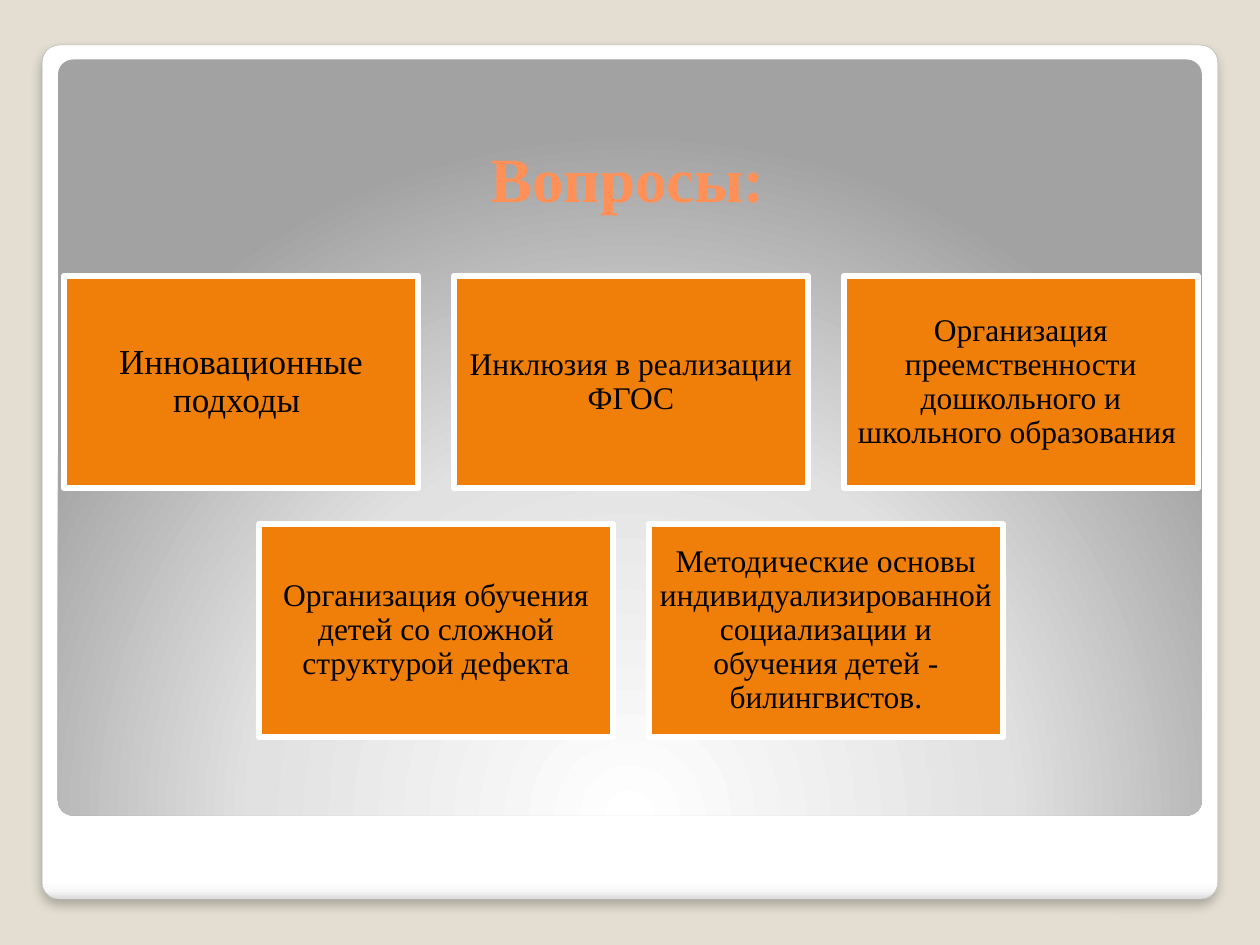
from dataclasses import dataclass

from lxml import etree
from pptx import Presentation
from pptx.dml.color import RGBColor
from pptx.enum.shapes import MSO_SHAPE
from pptx.enum.text import MSO_ANCHOR, PP_ALIGN
from pptx.oxml import parse_xml
from pptx.oxml.ns import nsdecls, qn
from pptx.util import Cm, Pt

RECT, ROUND_RECT = MSO_SHAPE.RECTANGLE, MSO_SHAPE.ROUNDED_RECTANGLE
CENTER, MIDDLE = PP_ALIGN.CENTER, MSO_ANCHOR.MIDDLE


@dataclass(frozen=True)
class Theme:
    font: str = "Times New Roman"
    background: str = "E3DED1"
    frame_line: str = "A4A4A4"
    card: str = "F07F09"
    card_line: str = "FFFFFF"
    text: str = "000000"
    title: str = "FF9158"
    title_size: int = 36
    lead_size: int = 20
    card_size: int = 18


THEME = Theme()
FRAME_STOPS = [(0, "FFFFFF"), (98, "FFFFFF"), (99, "F7F7F7"), (100, "DADADA")]
PANEL_STOPS = [(0, "FFFFFF"), (55, "E1E1E1"), (100, "A2A2A2")]
LINEAR = '<a:lin ang="5400000" scaled="0"/>'
RADIAL = ('<a:path path="circle"><a:fillToRect l="50000" t="175000" '
          'r="50000" b="-75000"/></a:path>')
SHADOW = ('<a:outerShdw {} blurRad="76200" dist="50800" dir="5400000" '
          'algn="tl" rotWithShape="0"><a:srgbClr val="000000">'
          '<a:alpha val="25000"/></a:srgbClr></a:outerShdw>')
CARD_ROWS = [
    [
        ("Инновационные подходы ", THEME.lead_size),
        ("Инклюзия в реализации ФГОС", THEME.card_size),
        ("Организация преемственности дошкольного и школьного образования ",
         THEME.card_size),
    ],
    [
        ("Организация обучения детей со сложной структурой дефекта",
         THEME.card_size),
        ("Методические основы индивидуализированной социализации "
         "и обучения детей - билингвистов.", THEME.card_size),
    ],
]


def rgb(value):
    return RGBColor.from_string(value)


def write(sp, text, size, color, bold=False, inset=0.18):
    tf = sp.text_frame
    tf.word_wrap = True
    tf.vertical_anchor = MIDDLE
    tf.margin_left = tf.margin_right = Cm(inset)
    tf.margin_top = tf.margin_bottom = Cm(inset)
    tf.text = text
    p = tf.paragraphs[0]
    p.alignment = CENTER
    p.line_spacing = 0.9
    r = p.runs[0]
    r.font.name = THEME.font
    r.font.size = Pt(size)
    r.font.bold = bold
    r.font.color.rgb = rgb(color)


def add_gradient_panel(s, left, top, width, height, stops, direction):
    sp = s.shapes.add_shape(ROUND_RECT, Cm(left), Cm(top), Cm(width), Cm(height))
    sp.adjustments[0] = 0.02
    sp.shadow.inherit = False
    sp.line.fill.background()
    marks = "".join(f'<a:gs pos="{pos * 1000}"><a:srgbClr val="{color}"/></a:gs>'
                    for pos, color in stops)
    gradient = parse_xml(f'<a:gradFill {nsdecls("a")} rotWithShape="1">'
                         f'<a:gsLst>{marks}</a:gsLst>{direction}</a:gradFill>')
    sp._element.spPr.find(qn("a:prstGeom")).addnext(gradient)
    return sp


def add_backdrop(s, left, top, width, height):
    s.background.fill.solid()
    s.background.fill.fore_color.rgb = rgb(THEME.background)
    frame = add_gradient_panel(s, left, top, width, height, FRAME_STOPS, LINEAR)
    frame.line.color.rgb = rgb(THEME.frame_line)
    frame.line.width = Pt(0.16)
    effects = frame._element.spPr.find(qn("a:effectLst"))
    effects.append(parse_xml(SHADOW.format(nsdecls("a"))))
    add_gradient_panel(s, left + 0.32, top + 0.29, width - 0.64, 15.24,
                       PANEL_STOPS, RADIAL)


def add_title(s, left, top, width, height):
    sp = s.shapes.add_textbox(Cm(left), Cm(top), Cm(width), Cm(height))
    write(sp, "Вопросы:", THEME.title_size, THEME.title, bold=True)


def add_card(s, left, top, width, height, text, size):
    sp = s.shapes.add_shape(RECT, Cm(left), Cm(top), Cm(width), Cm(height))
    sp.shadow.inherit = False
    sp.fill.solid()
    sp.fill.fore_color.rgb = rgb(THEME.card)
    sp.line.color.rgb = rgb(THEME.card_line)
    sp.line.width = Pt(3.35)
    etree.SubElement(sp.line._ln, qn("a:round"))
    write(sp, text, size, THEME.text)


def add_card_grid(s, left, top, width, height, gap=0.72):
    columns = max(len(row) for row in CARD_ROWS)
    card_w = (width - gap * (columns - 1)) / columns
    card_h = (height - gap * (len(CARD_ROWS) - 1)) / len(CARD_ROWS)
    for i, row in enumerate(CARD_ROWS):
        row_left = left + (columns - len(row)) * (card_w + gap) / 2
        for j, (text, size) in enumerate(row):
            add_card(s, row_left + j * (card_w + gap), top + i * (card_h + gap),
                     card_w, card_h, text, size)


def main():
    prs = Presentation()
    prs.slide_width, prs.slide_height = Cm(25.4), Cm(19.05)
    s = prs.slides.add_slide(prs.slide_layouts[6])
    add_backdrop(s, 0.85, 0.91, 23.7, 17.22)
    add_title(s, 1.27, 2.57, 22.76, 2.2)
    add_card_grid(s, 1.29, 5.56, 22.86, 9.29)
    prs.save("out.pptx")


if __name__ == "__main__":
    main()
